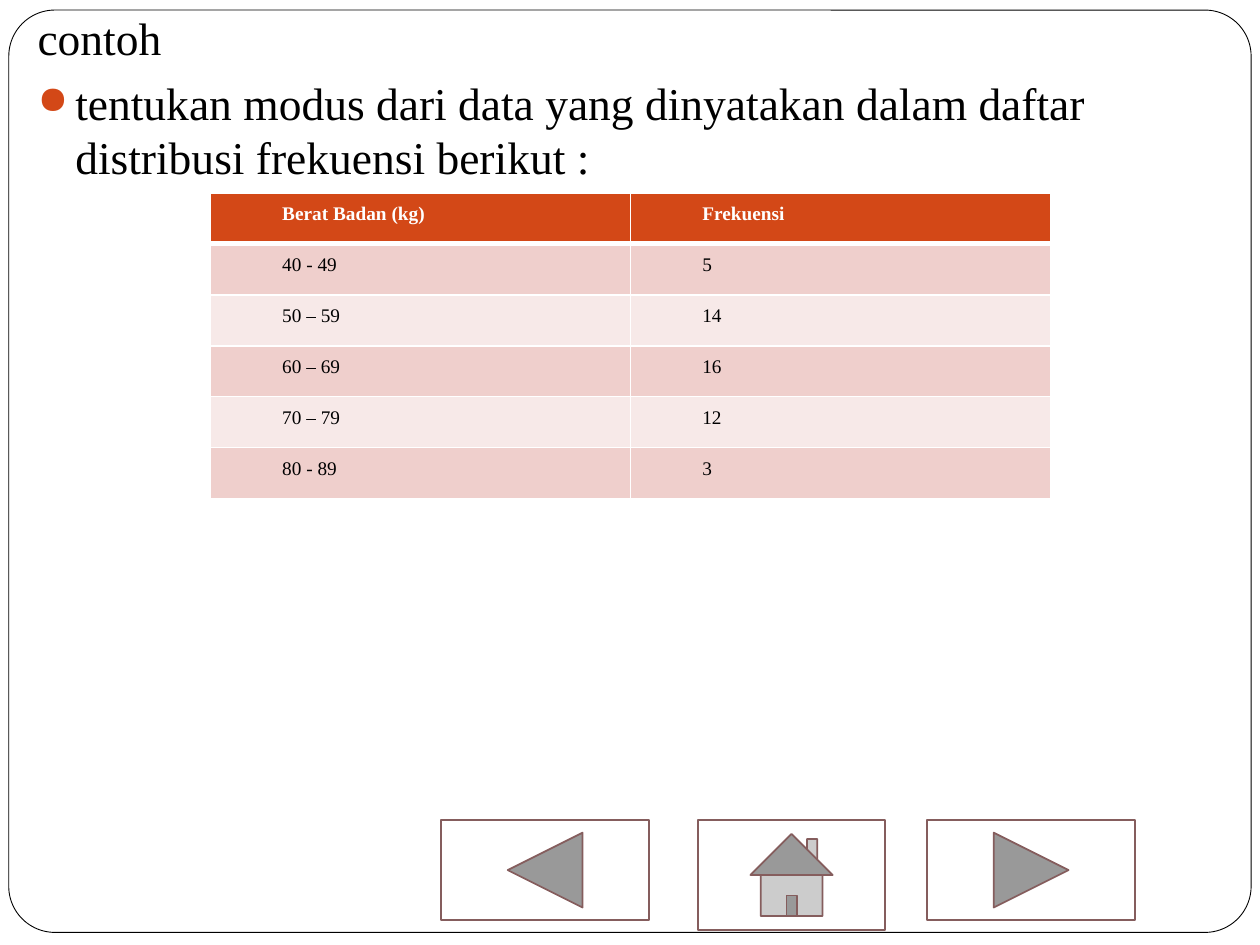
from lxml.etree import SubElement
from pptx import Presentation
from pptx.dml.color import RGBColor
from pptx.enum.shapes import MSO_SHAPE as SHAPE
from pptx.enum.text import PP_ALIGN as ALIGN
from pptx.oxml.ns import qn
from pptx.util import Inches, Pt

WHITE = RGBColor(0xFF, 0xFF, 0xFF)
BLACK = RGBColor(0, 0, 0)
ORANGE = RGBColor(0xD3, 0x48, 0x17)
PINK = RGBColor(0xEF, 0xCF, 0xCC)
PALE_PINK = RGBColor(0xF7, 0xE9, 0xE8)
MAROON = RGBColor(0x85, 0x5D, 0x5D)
FONT = "Times New Roman"
WIDTH, HEIGHT = Inches(10), Inches(7.5)

FREQUENCIES = [
    ("Berat Badan (kg)", "Frekuensi"),
    ("40 - 49", "5"),
    ("50 – 59", "14"),
    ("60 – 69", "16"),
    ("70 – 79", "12"),
    ("80 - 89", "3"),
]


def box(left, top, width, height):
    """Turn lengths in inches into a box."""
    return tuple(Inches(length) for length in (left, top, width, height))


def write(paragraph, text, size=11, color=BLACK, bold=False, align=None,
          indent=0, hanging=0, before=None, spacing=None, bullet=None):
    props = paragraph._p.get_or_add_pPr()
    props.set("marL", str(Inches(indent)))
    props.set("indent", str(-Inches(hanging)))
    if bullet:
        tint = SubElement(props, qn("a:buClr"))
        SubElement(tint, qn("a:srgbClr"), val=str(ORANGE))
        SubElement(props, qn("a:buSzPct"), val="85000")
        SubElement(props, qn("a:buChar"), char=bullet)
    paragraph.alignment = align
    paragraph.space_before = before
    paragraph.line_spacing = spacing
    run = paragraph.add_run()
    run.text = text
    font = run.font
    font.name, font.size, font.bold = FONT, Pt(size), bold
    font.color.rgb = color


def add_outlined(slide, kind, area, line, weight):
    shape = slide.shapes.add_shape(kind, *area)
    shape.shadow.inherit = False
    shape.fill.solid()
    shape.fill.fore_color.rgb = WHITE
    shape.line.color.rgb = line
    shape.line.width = Pt(weight)
    return shape


def add_frame(slide, area):
    frame = add_outlined(slide, SHAPE.ROUNDED_RECTANGLE, area, BLACK, 0.5)
    frame.adjustments[0] = 0.05


def add_question(slide, area):
    question = slide.shapes.add_textbox(*area).text_frame
    question.word_wrap = True
    question.margin_top = Inches(0.08)
    layout = dict(size=26, indent=0.3, hanging=0.3)
    write(question.paragraphs[0], "contoh", **layout)
    write(question.add_paragraph(),
          "tentukan modus dari data yang dinyatakan dalam daftar "
          "distribusi frekuensi berikut :",
          before=Pt(5.8), bullet="●", **layout)


def set_borders(cell, **weights):
    props = cell._tc.get_or_add_tcPr()
    for index, (side, weight) in enumerate(weights.items()):
        border = SubElement(props, qn(f"a:{side}"), w=str(Pt(weight)))
        fill = SubElement(border, qn("a:solidFill"))
        SubElement(fill, qn("a:srgbClr"), val=str(WHITE))
        # Borders come before the cell's fill
        props.insert(index, border)


def add_frequencies(slide, area):
    rows, columns = len(FREQUENCIES), len(FREQUENCIES[0])
    table = slide.shapes.add_table(rows, columns, *area).table
    for r, values in enumerate(FREQUENCIES):
        header = r == 0
        fill = ORANGE if header else PINK if r % 2 else PALE_PINK
        for c, value in enumerate(values):
            cell = table.cell(r, c)
            cell.margin_left = cell.margin_right = Inches(0.07)
            cell.margin_top = cell.margin_bottom = 0
            cell.fill.solid()
            cell.fill.fore_color.rgb = fill
            set_borders(cell, lnL=1, lnR=1, lnT=3 if r == 1 else 1,
                        lnB=3 if header else 1)
            write(cell.text_frame.paragraphs[0], value, bold=header,
                  color=WHITE if header else BLACK,
                  align=ALIGN.JUSTIFY, indent=0.5, spacing=1.5)


def add_navigation(slide, area):
    left, top, width, height = area
    # Each button: kind, then left, width and height as shares of the area
    buttons = [
        (SHAPE.ACTION_BUTTON_BACK_OR_PREVIOUS, 0, 0.3, 0.91),
        (SHAPE.ACTION_BUTTON_HOME, 0.37, 0.27, 1),
        (SHAPE.ACTION_BUTTON_FORWARD_OR_NEXT, 0.7, 0.3, 0.91),
    ]
    for kind, x, w, h in buttons:
        place = (left + int(x * width), top, int(w * width), int(h * height))
        add_outlined(slide, kind, place, MAROON, 1)


def main():
    deck = Presentation()
    deck.slide_width, deck.slide_height = WIDTH, HEIGHT
    slide = deck.slides.add_slide(deck.slide_layouts[6])
    add_frame(slide, box(0.07, 0.08, 9.86, 7.32))
    add_question(slide, box(0.2, 0, 9.3, 5.72))
    add_frequencies(slide, box(1.67, 1.53, 6.67, 2.43))
    add_navigation(slide, box(3.5, 6.51, 5.51, 0.87))
    deck.save("out.pptx")


if __name__ == "__main__":
    main()
